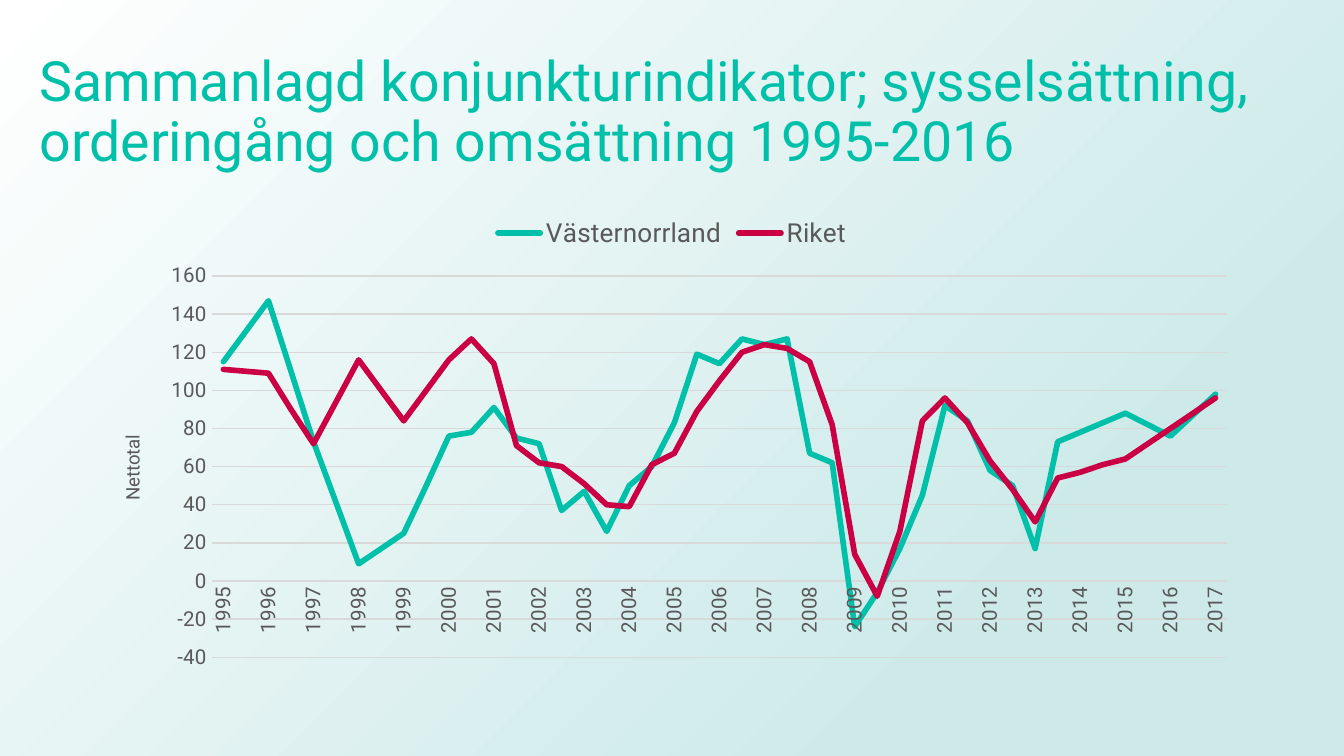
import pptx
import pptx.chart.data
import pptx.dml.color
import pptx.enum.chart
import pptx.enum.shapes
import pptx.enum.text
import pptx.oxml
import pptx.oxml.ns
import pptx.util

FONT = "Roboto"
COLORS = {"teal": "00C0A9", "red": "CB0044", "text": "595959", "rule": "D9D9D9",
          "black": "000000", "mint": "CDEAE9", "white": "FFFFFF"}
YEARS = [str(1995 + i // 2) for i in range(45)]  # two surveys a year
SERIES = {
    "Västernorrland": ("teal", [
        115, 131, 147, 110, 73, 41, 9, 17, 25, 50, 76, 78, 91, 75, 72,
        37, 47, 26, 50, 60, 83, 119, 114, 127, 124, 127, 67, 62, -24, -6,
        17, 45, 92, 84, 58, 50, 17, 73, 78, 83, 88, 82, 76, 87, 98]),
    "Riket": ("red", [
        111, 110, 109, 90, 72, 94, 116, 100, 84, 100, 116, 127, 114, 71, 62,
        60, 51, 40, 39, 61, 67, 89, 105, 120, 124, 122, 115, 82, 14, -8,
        26, 84, 96, 83, 63, 48, 31, 54, 57, 61, 64, 72, 80, 88, 96]),
}


def rgb(name):
    return pptx.dml.color.RGBColor.from_string(COLORS[name])


def set_font(font, size, color):
    for key, value in {"name": FONT, "size": pptx.util.Pt(size), "bold": False}.items():
        setattr(font, key, value)
    font.color.rgb = rgb(color)


def set_line(line, color, width):
    line.color.rgb = rgb(color)
    line.width = pptx.util.Pt(width)


def make_element(xml, prefix):
    tag, rest = xml.split(" ", 1)
    return pptx.oxml.parse_xml(f"{tag} {pptx.oxml.ns.nsdecls(prefix)} {rest}")


def turn_upright(element):
    """Let the text of an axis or axis title read from bottom to top."""
    body = element.find(".//" + pptx.oxml.ns.qn("a:bodyPr"))
    body.set("rot", "-5400000")
    body.set("vert", "horz")


def place_manually(parent, index, target="", **percents):
    """Give a chart part a fixed place, in percent of the chart's size."""
    for old in parent.findall(pptx.oxml.ns.qn("c:layout")):
        parent.remove(old)
    modes = '<c:xMode val="edge"/><c:yMode val="edge"/>'
    values = "".join(f'<c:{key} val="{value / 100}"/>' for key, value in percents.items())
    parent.insert(index, make_element(
        f"<c:layout ><c:manualLayout>{target}{modes}{values}</c:manualLayout></c:layout>", "c"))


def add_background(slide, box):
    s = slide.shapes.add_shape(pptx.enum.shapes.MSO_SHAPE.RECTANGLE, *box)
    s.shadow.inherit = False
    s.line.fill.background()
    # Radial gradient spreading from the bottom right corner
    stops = "".join(f'<a:gs pos="{pos}"><a:srgbClr val="{COLORS[c]}"/></a:gs>'
                    for pos, c in ((23000, "mint"), (100000, "white")))
    gradient = make_element(
        f'<a:gradFill rotWithShape="1"><a:gsLst>{stops}</a:gsLst><a:path path="circle">'
        '<a:fillToRect l="100000" t="100000"/></a:path></a:gradFill>', "a")
    s.fill.background()
    blank = s.fill._xPr.find(pptx.oxml.ns.qn("a:noFill"))
    blank.getparent().replace(blank, gradient)


def add_title(slide, box):
    tf = slide.shapes.add_textbox(*box).text_frame
    tf.word_wrap = True
    tf.vertical_anchor = pptx.enum.text.MSO_ANCHOR.MIDDLE
    p = tf.paragraphs[0]
    p.line_spacing = 0.9
    r = p.add_run()
    r.text = "Sammanlagd konjunkturindikator; sysselsättning, orderingång och omsättning 1995-2016"
    set_font(r.font, 29.7, "teal")


def add_indicator_chart(slide, box):
    data = pptx.chart.data.CategoryChartData(number_format="0")
    data.categories = YEARS
    for name, (_, values) in SERIES.items():
        data.add_series(name, values)
    chart = slide.shapes.add_chart(pptx.enum.chart.XL_CHART_TYPE.LINE, *box, data).chart
    chart.has_title = False
    set_font(chart.font, 10, "black")

    # Lines
    plot = chart.plots[0]
    plot.vary_by_categories = False
    for series, (color, _) in zip(plot.series, SERIES.values()):
        series.smooth = False
        series.marker.style = pptx.enum.chart.XL_MARKER_STYLE.NONE
        set_line(series.format.line, color, 3)
        series.format.line._get_or_add_ln().set("cap", "rnd")

    # Legend
    chart.has_legend = True
    chart.legend.position = pptx.enum.chart.XL_LEGEND_POSITION.TOP
    chart.legend.include_in_layout = False
    set_font(chart.legend.font, 14, "text")

    # Axes
    years, totals = chart.category_axis, chart.value_axis
    for axis in (years, totals):
        axis.major_tick_mark = axis.minor_tick_mark = pptx.enum.chart.XL_TICK_MARK.NONE
        set_font(axis.tick_labels.font, 11, "text")
    set_line(years.format.line, "rule", 0.75)
    turn_upright(years._element)
    years._element.find(pptx.oxml.ns.qn("c:noMultiLvlLbl")).addprevious(
        make_element('<c:tickLblSkip val="2"/>', "c"))

    scale = {"minimum_scale": -40, "maximum_scale": 160, "major_unit": 20}
    for key, value in scale.items():
        setattr(totals, key, value)
    totals.tick_labels.number_format = "0"
    totals.tick_labels.number_format_is_linked = False
    totals.format.line.fill.background()
    set_line(totals.major_gridlines.format.line, "rule", 0.75)

    # Axis title and plot area
    r = totals.axis_title.text_frame.paragraphs[0].add_run()
    r.text = "Nettotal"
    set_font(r.font, 10, "text")
    turn_upright(totals.axis_title._element)
    place_manually(totals.axis_title._element, 1, x=2.1, y=48)
    plot_area = chart._chartSpace.find(".//" + pptx.oxml.ns.qn("c:plotArea"))
    place_manually(plot_area, 0, '<c:layoutTarget val="inner"/>',
                   x=10.3, y=15.5, w=87.6, h=79.7)


def main():
    prs = pptx.Presentation()
    prs.slide_width = pptx.util.Inches(10)
    prs.slide_height = prs.slide_width * 9 // 16
    slide = prs.slides.add_slide(prs.slide_layouts[6])

    def percent_box(*percents):
        """Left, top, width and height in percent of the slide's size."""
        return [round(part * whole / 100) for part, whole in
                zip(percents, (prs.slide_width, prs.slide_height) * 2)]

    add_background(slide, percent_box(0, 0, 100, 100))
    add_title(slide, percent_box(1.95, 5.35, 98.05, 19.4))
    add_indicator_chart(slide, percent_box(6.9, 26.7, 86.2, 63.3))
    prs.save("out.pptx")


if __name__ == "__main__":
    main()
